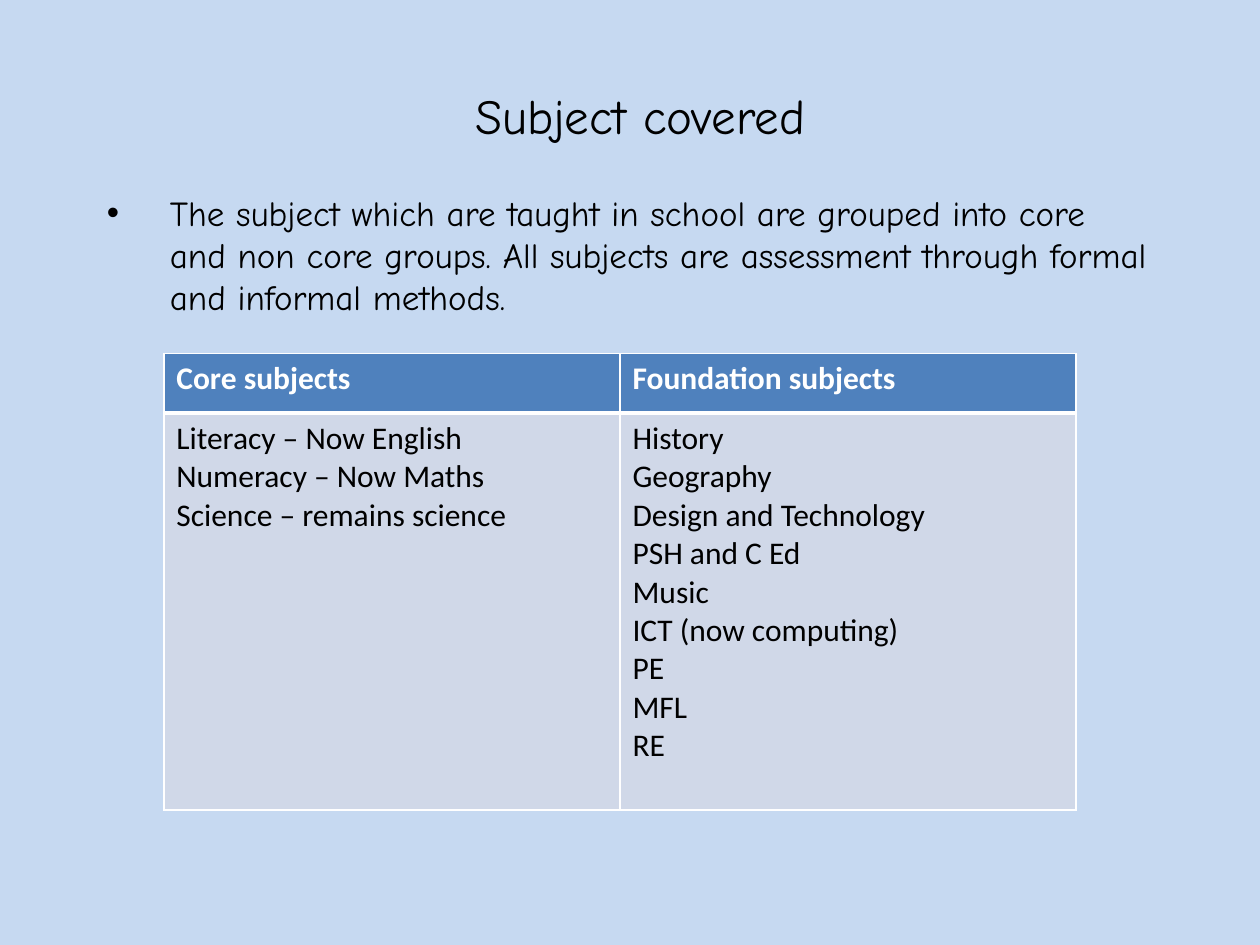
from dataclasses import dataclass

from lxml import etree
from pptx import Presentation
from pptx.dml.color import RGBColor
from pptx.enum.text import MSO_ANCHOR, PP_ALIGN
from pptx.oxml.ns import qn
from pptx.util import Pt

CENTER, LEFT = PP_ALIGN.CENTER, PP_ALIGN.LEFT
MIDDLE, TOP = MSO_ANCHOR.MIDDLE, MSO_ANCHOR.TOP
TITLE_ONLY = 5
HEAD_FONT, TABLE_FONT = "Comic Neue", "Calibri"
BLACK, WHITE = "000000", "FFFFFF"
BACKGROUND, HEADER_FILL, BODY_FILL = "C6D9F1", "4F81BD", "D0D8E8"
HEADER_HEIGHT, BODY_HEIGHT = 34, 227
THIN, THICK = 1, 3


@dataclass
class SubjectGroup:
    heading: str
    subjects: list[str]


GROUPS = [
    SubjectGroup("Core subjects", [
        "Literacy – Now English", "Numeracy – Now Maths",
        "Science – remains science"]),
    SubjectGroup("Foundation subjects", [
        "History", "Geography", "Design and Technology", "PSH and C Ed",
        "Music", "ICT (now computing)", "PE", "MFL", "RE"]),
]


def rgb(color: str) -> RGBColor:
    return RGBColor.from_string(color)


def add_run(p, text: str, font: str, size: float, color: str,
            bold: bool = False) -> None:
    r = p.add_run()
    r.text = text
    r.font.name = font
    r.font.size = Pt(size)
    r.font.bold = bold
    r.font.color.rgb = rgb(color)


def add_bullet(p, indent: float) -> None:
    pPr = p._p.get_or_add_pPr()
    pPr.set("marL", str(Pt(indent)))
    pPr.set("indent", str(Pt(-indent)))
    etree.SubElement(pPr, qn("a:buFont"), typeface="Arial")
    etree.SubElement(pPr, qn("a:buChar"), char="•")


def set_borders(cell, top: float, bottom: float) -> None:
    """Draw white cell borders; the sides are always thin."""
    tcPr = cell._tc.get_or_add_tcPr()
    widths = {"lnL": THIN, "lnR": THIN, "lnT": top, "lnB": bottom}
    for i, (tag, width) in enumerate(widths.items()):
        ln = etree.Element(qn(f"a:{tag}"), w=str(Pt(width)))
        fill = etree.SubElement(ln, qn("a:solidFill"))
        etree.SubElement(fill, qn("a:srgbClr"), val=WHITE)
        tcPr.insert(i, ln)


def fill_cell(cell, lines: list[str], fill: str, color: str,
              bold: bool) -> None:
    cell.fill.solid()
    cell.fill.fore_color.rgb = rgb(fill)
    tf = cell.text_frame
    for i, line in enumerate(lines):
        p = tf.add_paragraph() if i else tf.paragraphs[0]
        add_run(p, line, TABLE_FONT, 18, color, bold)


def add_title(s, text: str) -> None:
    sp = s.shapes.title
    sp.left, sp.top, sp.width, sp.height = Pt(65.5), Pt(43.2), Pt(600.5), Pt(45.4)
    tf = sp.text_frame
    tf.vertical_anchor = MIDDLE
    p = tf.paragraphs[0]
    p.alignment = CENTER
    add_run(p, text, HEAD_FONT, 28, BLACK)


def add_intro(s, text: str) -> None:
    tf = s.shapes.add_textbox(Pt(54), Pt(105.8), Pt(612), Pt(90)).text_frame
    tf.word_wrap = True
    tf.vertical_anchor = TOP
    p = tf.paragraphs[0]
    p.alignment = LEFT
    add_bullet(p, 36)
    add_run(p, text, HEAD_FONT, 20, BLACK)


def add_subject_table(s, groups: list[SubjectGroup]) -> None:
    table = s.shapes.add_table(2, len(groups), Pt(93.6), Pt(202), Pt(521.4),
                               Pt(HEADER_HEIGHT + BODY_HEIGHT)).table
    table.rows[0].height = Pt(HEADER_HEIGHT)
    table.rows[1].height = Pt(BODY_HEIGHT)
    for col, group in enumerate(groups):
        head, body = table.cell(0, col), table.cell(1, col)
        fill_cell(head, [group.heading], HEADER_FILL, WHITE, True)
        fill_cell(body, group.subjects, BODY_FILL, BLACK, False)
        set_borders(head, THIN, THICK)
        set_borders(body, THICK, THIN)


def main() -> None:
    prs = Presentation()
    prs.slide_width, prs.slide_height = Pt(720), Pt(540)
    s = prs.slides.add_slide(prs.slide_layouts[TITLE_ONLY])
    s.background.fill.solid()
    s.background.fill.fore_color.rgb = rgb(BACKGROUND)
    add_title(s, "Subject covered")
    add_intro(s, "The subject which are taught in school are grouped into core "
                 "and non core groups. All subjects are assessment through "
                 "formal and informal methods.")
    add_subject_table(s, GROUPS)
    prs.save("out.pptx")


if __name__ == "__main__":
    main()
